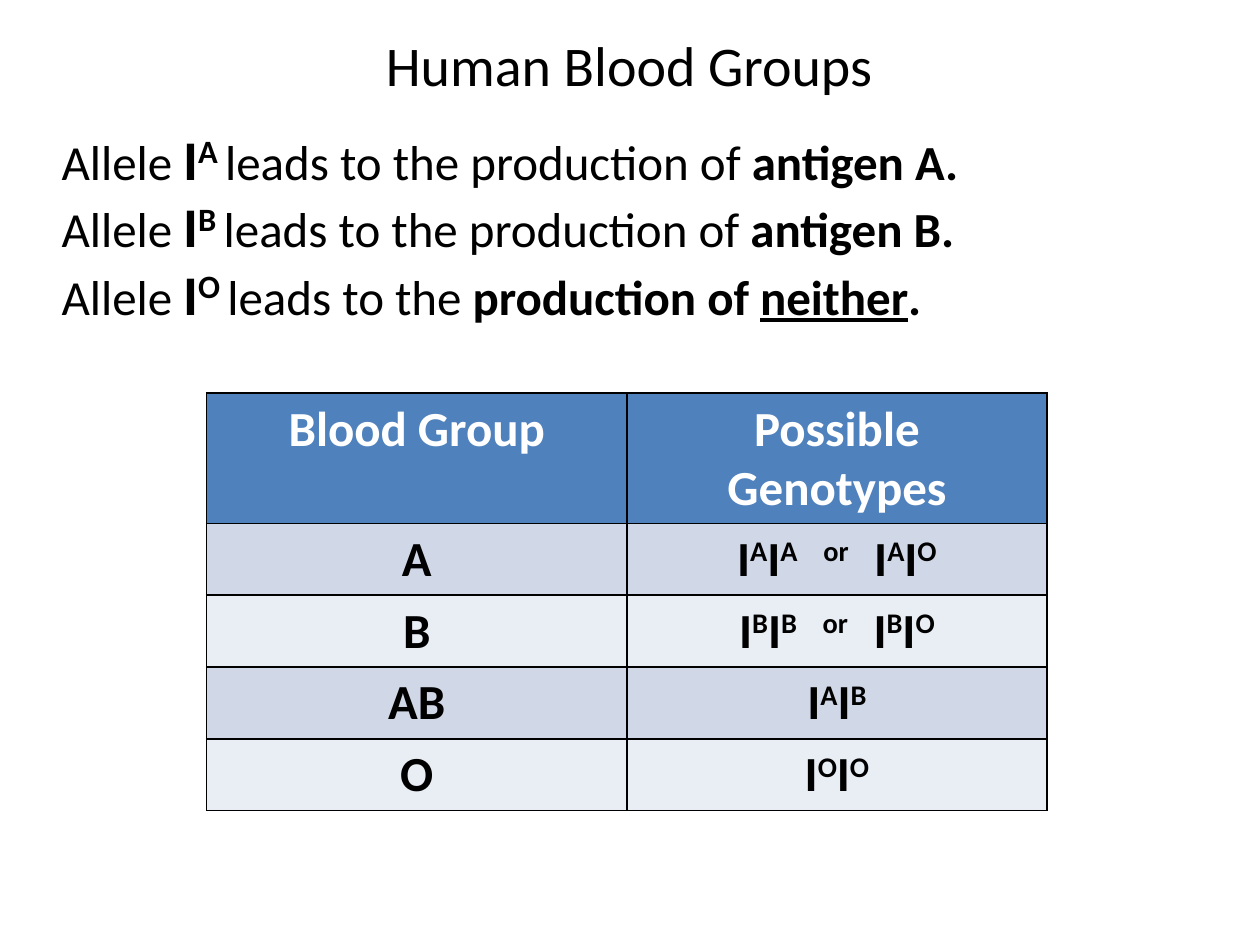
from lxml.etree import SubElement
from pptx import Presentation
from pptx.dml.color import RGBColor
from pptx.enum.text import MSO_ANCHOR as Anchor, PP_ALIGN as Align
from pptx.oxml.ns import qn
from pptx.util import Inches, Pt

COLORS = {
    "text": "000000",
    "header_text": "FFFFFF",
    "header": "4F81BD",
    "odd_row": "D0D8E8",
    "even_row": "E9EDF4",
    "border": "000000",
}
FONT = "Calibri"
ALLELE_ENDINGS = [
    ("A", [("leads to the production of ", {}), ("antigen A.", {"bold": True})]),
    ("B", [("leads to the production of ", {}), ("antigen B.", {"bold": True})]),
    ("O", [("leads to the ", {}), ("production of ", {"bold": True}),
           ("neither", {"bold": True, "underline": True}), (".", {"bold": True})]),
]
BLOOD_GROUPS = [
    ("A", ["AA", "AO"]),
    ("B", ["BB", "BO"]),
    ("AB", ["AB"]),
    ("O", ["OO"]),
]


def add_run(paragraph, text, size=28, bold=False, underline=False,
            raised=False, color="text", spacing=0):
    """Append one formatted run; spacing is extra points per letter."""
    run = paragraph.add_run()
    run.text = text
    font = run.font
    font.name, font.size, font.bold = FONT, Pt(size), bold
    font.underline = underline
    font.color.rgb = RGBColor.from_string(COLORS[color])
    properties = font._element
    if raised:
        properties.set("baseline", "30000")
    if spacing:
        properties.set("spc", str(spacing * 100))


def add_text_box(slide, left, top, width, height, anchor=Anchor.TOP):
    """Return the text frame of a new wrapping text box."""
    box = slide.shapes.add_textbox(Inches(left), Inches(top), Inches(width), Inches(height))
    text_frame = box.text_frame
    text_frame.word_wrap = True
    text_frame.vertical_anchor = anchor
    return text_frame


def add_title(slide):
    """Write the centred slide title."""
    text_frame = add_text_box(slide, 0.23, 0.23, 9.53, 0.55, Anchor.MIDDLE)
    paragraph = text_frame.paragraphs[0]
    paragraph.alignment = Align.CENTER
    add_run(paragraph, "Human Blood Groups", size=32)


def add_allele_lines(slide):
    """Write one line for what each allele produces."""
    text_frame = add_text_box(slide, 0.39, 0.94, 9.22, 1.72)
    for index, (allele, ending) in enumerate(ALLELE_ENDINGS):
        paragraph = text_frame.add_paragraph() if index else text_frame.paragraphs[0]
        add_run(paragraph, "Allele ")
        add_run(paragraph, "I", size=32, bold=True)
        add_run(paragraph, allele + " ", size=32, bold=True, raised=True)
        for text, style in ending:
            add_run(paragraph, text, **style)


def add_genotypes(paragraph, genotypes):
    """Write genotypes with raised allele letters, joined by a spaced 'or'."""
    for index, genotype in enumerate(genotypes):
        if index:
            for text, spacing in ((" ", 11), ("or", 0), (" ", 11)):
                add_run(paragraph, text, bold=True, raised=True, spacing=spacing)
        for allele in genotype:
            add_run(paragraph, "I", bold=True)
            add_run(paragraph, allele, bold=True, raised=True)


def format_cell(cell, fill):
    """Give a cell thin borders and a fill, and return its centred paragraph."""
    properties = cell._tc.get_or_add_tcPr()
    for side in ("a:lnL", "a:lnR", "a:lnT", "a:lnB"):
        line = SubElement(properties, qn(side), w=str(Pt(1)))
        solid = SubElement(line, qn("a:solidFill"))
        SubElement(solid, qn("a:srgbClr"), val=COLORS["border"])
    cell.fill.solid()
    cell.fill.fore_color.rgb = RGBColor.from_string(COLORS[fill])
    paragraph = cell.text_frame.paragraphs[0]
    paragraph.alignment = Align.CENTER
    return paragraph


def add_blood_group_table(slide):
    """Add the table of blood groups and their genotypes."""
    frame = slide.shapes.add_table(
        len(BLOOD_GROUPS) + 1, 2, Inches(1.64), Inches(3.12), Inches(6.67), Inches(3.3))
    table = frame.table
    for row in table.rows:
        row.height = Inches(0.57)
    table.rows[0].height = Inches(1.03)
    for column, heading in enumerate(("Blood Group", "Possible Genotypes")):
        paragraph = format_cell(table.cell(0, column), "header")
        add_run(paragraph, heading, bold=True, color="header_text")
    for row, (group, genotypes) in enumerate(BLOOD_GROUPS, start=1):
        fill = "odd_row" if row % 2 else "even_row"
        add_run(format_cell(table.cell(row, 0), fill), group, bold=True)
        add_genotypes(format_cell(table.cell(row, 1), fill), genotypes)


def main():
    """Build and save the slide."""
    presentation = Presentation()
    presentation.slide_width, presentation.slide_height = Inches(10), Inches(7.5)
    slide = presentation.slides.add_slide(presentation.slide_layouts[6])
    add_title(slide)
    add_allele_lines(slide)
    add_blood_group_table(slide)
    presentation.save("out.pptx")


if __name__ == "__main__":
    main()
